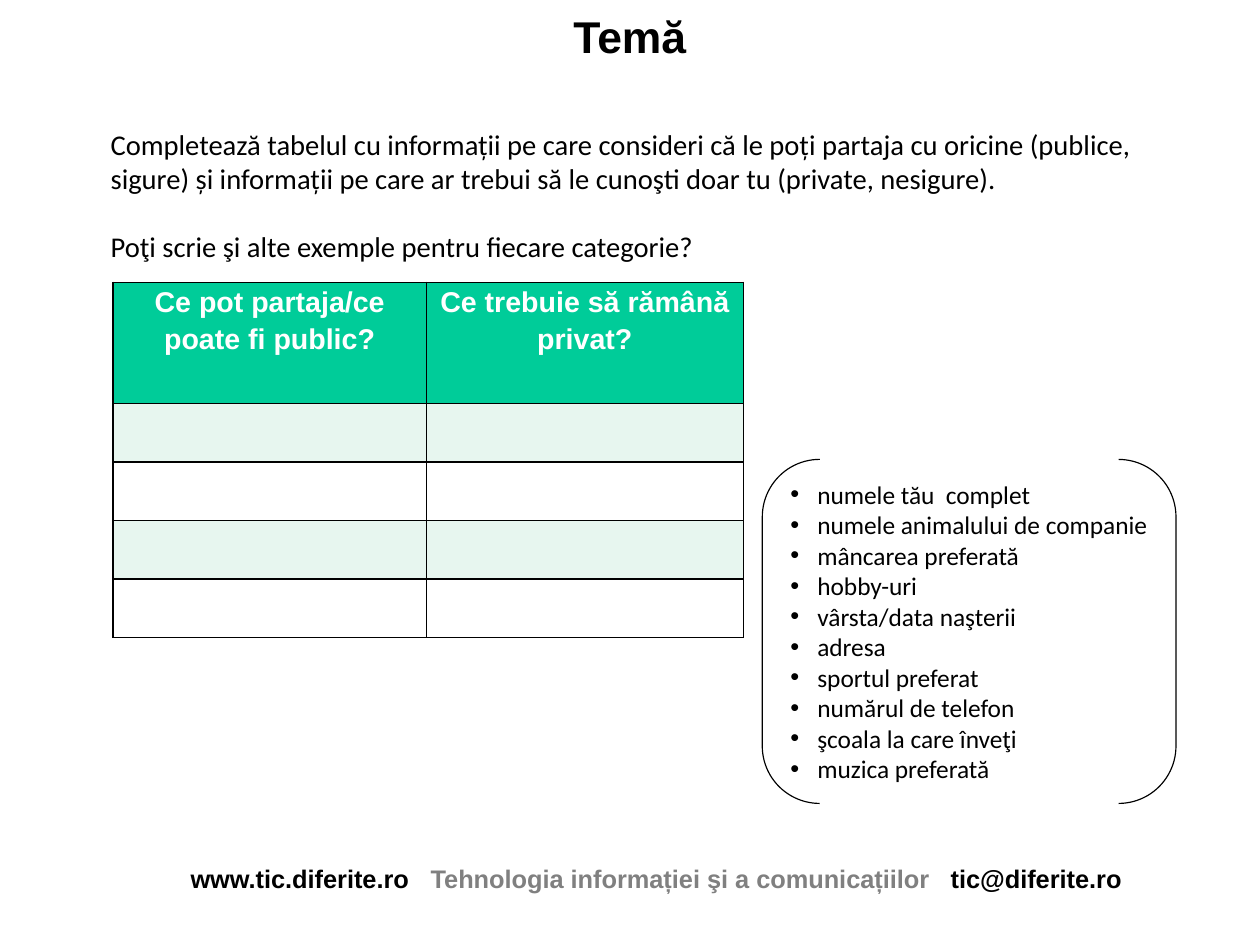
from dataclasses import dataclass

from lxml import etree
from pptx import Presentation
from pptx.dml.color import RGBColor
from pptx.enum.shapes import MSO_SHAPE
from pptx.enum.text import MSO_ANCHOR, PP_ALIGN
from pptx.oxml.ns import qn
from pptx.util import Pt

BRACKETS = MSO_SHAPE.DOUBLE_BRACKET
MIDDLE, TOP = MSO_ANCHOR.MIDDLE, MSO_ANCHOR.TOP
LEFT, CENTER = PP_ALIGN.LEFT, PP_ALIGN.CENTER
BLACK, WHITE, GREY = "000000", "FFFFFF", "808080"
GREEN, MINT = "00CC99", "E7F6EF"


@dataclass(frozen=True)
class Style:
    font: str
    size: float
    bold: bool = False
    color: str = BLACK


@dataclass(frozen=True)
class Box:
    left: float
    top: float
    width: float
    height: float

    def lengths(self) -> tuple:
        return Pt(self.left), Pt(self.top), Pt(self.width), Pt(self.height)


TITLE = Style("Arial", 28, True)
CONTACT = Style("Arial", 16, True)
SUBJECT = Style("Arial", 16, True, GREY)
HEADING = Style("Arial", 18, True, WHITE)
TASK = Style("Calibri", 18)
EXAMPLE = Style("Calibri", 16)

TASK_LINES = [
    "Completează tabelul cu informații pe care consideri că le poți partaja cu oricine "
    "(publice, sigure) și informații pe care ar trebui să le cunoşti doar tu "
    "(private, nesigure).",
    "Poţi scrie şi alte exemple pentru fiecare categorie?",
]
HEADINGS = ["Ce pot partaja/ce poate fi public?", "Ce trebuie să rămână privat?"]
EXAMPLES = [
    "numele tău  complet",
    "numele animalului de companie",
    "mâncarea preferată",
    "hobby-uri",
    "vârsta/data naşterii",
    "adresa",
    "sportul preferat",
    "numărul de telefon",
    "şcoala la care înveţi",
    "muzica preferată",
]
FOOTER = [
    ("www.tic.diferite.ro\t", CONTACT),
    ("Tehnologia informației şi a comunicațiilor\t", SUBJECT),
    ("tic@diferite.ro", CONTACT),
]


def rgb(color: str) -> RGBColor:
    return RGBColor.from_string(color)


def add_run(paragraph, text: str, style: Style) -> None:
    run = paragraph.add_run()
    run.text = text
    run.font.name = style.font
    run.font.size = Pt(style.size)
    run.font.bold = style.bold
    run.font.color.rgb = rgb(style.color)


def set_frame(frame, anchor, margins: tuple) -> None:
    frame.word_wrap = True
    frame.vertical_anchor = anchor
    frame.margin_left, frame.margin_top, frame.margin_right, frame.margin_bottom = map(Pt, margins)


def fill_frame(frame, lines: list, spacing: float, align=LEFT, gap: float = 0) -> list:
    for index, runs in enumerate(lines):
        paragraph = frame.add_paragraph() if index else frame.paragraphs[0]
        paragraph.alignment = align
        paragraph.line_spacing = spacing
        if index and gap:
            paragraph.space_before = Pt(gap)
        for text, style in runs:
            add_run(paragraph, text, style)
    return list(frame.paragraphs)


def add_bullet(paragraph, indent: float) -> None:
    properties = paragraph._p.get_or_add_pPr()
    properties.set("marL", str(Pt(indent)))
    properties.set("indent", str(-Pt(indent)))
    color = etree.SubElement(properties, qn("a:buClr"))
    etree.SubElement(color, qn("a:srgbClr"), val=BLACK)
    etree.SubElement(properties, qn("a:buFont"), typeface="Arial")
    etree.SubElement(properties, qn("a:buChar"), char="•")


def add_tabs(paragraph, stops: list) -> None:
    tabs = etree.SubElement(paragraph._p.get_or_add_pPr(), qn("a:tabLst"))
    for stop in stops:
        etree.SubElement(tabs, qn("a:tab"), pos=str(Pt(stop)), algn="l")


def paint_cell(cell, color: str) -> None:
    cell.fill.solid()
    cell.fill.fore_color.rgb = rgb(color)
    properties = cell._tc.get_or_add_tcPr()
    for index, side in enumerate(("a:lnL", "a:lnR", "a:lnT", "a:lnB")):
        border = etree.Element(qn(side), w=str(Pt(1)))
        fill = etree.SubElement(border, qn("a:solidFill"))
        etree.SubElement(fill, qn("a:srgbClr"), val=BLACK)
        properties.insert(index, border)


def add_text(slide, box: Box, lines: list, spacing: float, anchor=TOP,
             margins: tuple = (7.2, 3.6, 7.2, 3.6), align=LEFT, gap: float = 0) -> list:
    frame = slide.shapes.add_textbox(*box.lengths()).text_frame
    set_frame(frame, anchor, margins)
    return fill_frame(frame, lines, spacing, align, gap)


def add_answer_table(slide, box: Box, widths: list, heights: list) -> None:
    table = slide.shapes.add_table(len(heights), len(widths), *box.lengths()).table
    for column, width in zip(table.columns, widths):
        column.width = Pt(width)
    for index, height in enumerate(heights):
        table.rows[index].height = Pt(height)
        for cell in table.rows[index].cells:
            paint_cell(cell, GREEN if index == 0 else MINT if index % 2 else WHITE)
    for cell, heading in zip(table.rows[0].cells, HEADINGS):
        cell.margin_left = cell.margin_right = Pt(5.4)
        cell.margin_top = cell.margin_bottom = Pt(0)
        fill_frame(cell.text_frame, [[(heading, HEADING)]], 1.15, CENTER)


def add_examples(slide, box: Box) -> None:
    brackets = slide.shapes.add_shape(BRACKETS, *box.lengths())
    brackets.adjustments[0] = 0.167
    brackets.shadow.inherit = False
    brackets.fill.solid()
    brackets.fill.fore_color.rgb = rgb(WHITE)
    brackets.line.color.rgb = rgb(BLACK)
    brackets.line.width = Pt(0.75)
    set_frame(brackets.text_frame, MIDDLE, (7.2, 3.6, 2, 3.6))
    lines = [[(example, EXAMPLE)] for example in EXAMPLES]
    for paragraph in fill_frame(brackets.text_frame, lines, 1.0):
        add_bullet(paragraph, 17)


def main() -> None:
    deck = Presentation()
    deck.slide_width, deck.slide_height = Pt(793.7), Pt(595.28)
    slide = deck.slides.add_slide(deck.slide_layouts[6])

    add_text(slide, Box(39.6, 7.9, 714.2, 31.7), [[("Temă", TITLE)]], 0.93,
             MIDDLE, (0, 1.4, 0, 0), CENTER)
    footer = add_text(slide, Box(113, 541.4, 629.3, 52.6), [FOOTER], 0.93,
                      margins=(7.2, 4.3, 7.2, 3.6))
    add_tabs(footer[0], [151.2, 478.8])
    add_answer_table(slide, Box(71.3, 177.8, 397, 224), [197.2, 199.8], [76.4] + [36.9] * 4)
    add_examples(slide, Box(480.2, 289.4, 260.6, 216.7))
    add_text(slide, Box(62.6, 76.2, 663.1, 131.2), [[(line, TASK)] for line in TASK_LINES],
             1.0, gap=21.4)

    deck.save("out.pptx")


if __name__ == "__main__":
    main()
